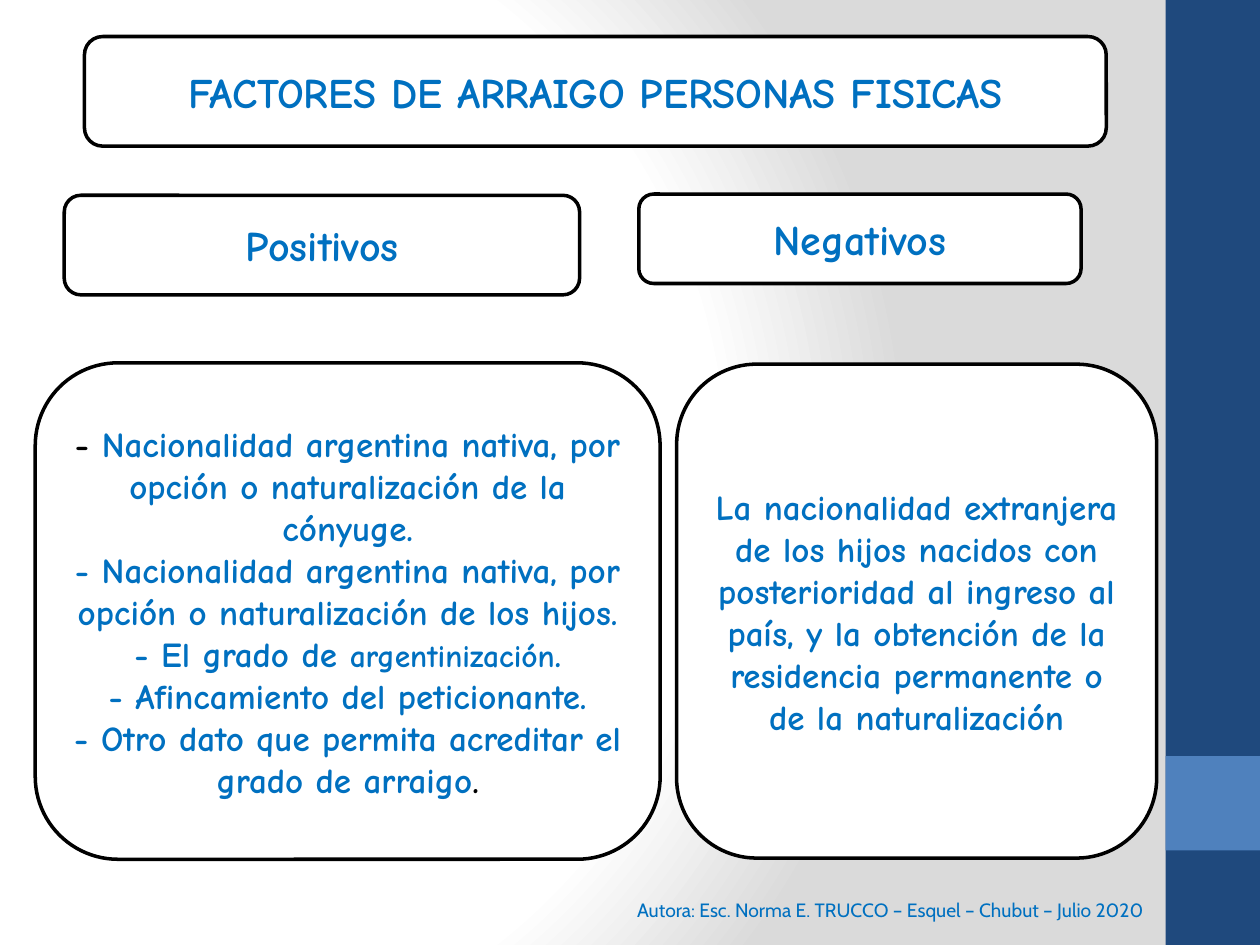
import pptx
import pptx.util
import pptx.dml.color
import pptx.enum.shapes
import pptx.enum.text
import pptx.oxml
import pptx.oxml.ns

Pt = pptx.util.Pt
ALIGN = pptx.enum.text.PP_ALIGN
MIDDLE = pptx.enum.text.MSO_ANCHOR.MIDDLE
SHAPE = pptx.enum.shapes.MSO_SHAPE
COLORS = {"text": "0070C0", "black": "000000", "white": "FFFFFF",
          "shade": "DADADA", "band": "1F497D", "accent": "4F81BD"}


def add_box(kind, place, fill, outline=None):
    box = slide.shapes.add_shape(kind, *[Pt(v) for v in place])
    box.shadow.inherit = False
    box.fill.solid()
    box.fill.fore_color.rgb = pptx.dml.color.RGBColor.from_string(COLORS[fill])
    if outline:
        box.line.color.rgb = pptx.dml.color.RGBColor.from_string(COLORS[outline])
        box.line.width = Pt(2)
    else:
        box.line.fill.background()
    return box


def write(holder, paragraphs, size, font="Comic Neue", bold=True, align=ALIGN.CENTER):
    frame = holder.text_frame
    frame.word_wrap = True
    frame.auto_size = pptx.enum.text.MSO_AUTO_SIZE.NONE
    frame.vertical_anchor = MIDDLE
    for i, pieces in enumerate(paragraphs):
        paragraph = frame.paragraphs[0] if i == 0 else frame.add_paragraph()
        paragraph.alignment = align
        paragraph.space_before = Pt(0)
        for text, color, run_size in pieces:
            run = paragraph.add_run()
            run.text = text
            run.font.name = font
            run.font.size = Pt(run_size or size)
            run.font.bold = bold
            run.font.color.rgb = pptx.dml.color.RGBColor.from_string(COLORS[color])


deck = pptx.Presentation()
deck.slide_width, deck.slide_height = Pt(720), Pt(540)
slide = deck.slides.add_slide(deck.slide_layouts[1])

stops = "".join(
    f'<a:gs pos="{position}"><a:srgbClr val="{COLORS[color]}"/></a:gs>'
    for position, color in ((0, "white"), (75000, "white"), (100000, "shade")))
background = pptx.oxml.parse_xml(
    f'<p:bg {pptx.oxml.ns.nsdecls("p", "a")}><p:bgPr><a:gradFill rotWithShape="1">'
    f'<a:gsLst>{stops}</a:gsLst><a:path path="circle">'
    '<a:fillToRect l="20000" t="50000" r="100000" b="50000"/></a:path></a:gradFill>'
    '<a:effectLst/></p:bgPr></p:bg>')
slide.element.cSld.insert(0, background)

add_box(SHAPE.RECTANGLE, (666, 0, 54, 540), "band")
add_box(SHAPE.RECTANGLE, (666, 432, 54, 54), "accent")

author = slide.shapes.add_textbox(Pt(246.24), Pt(505.44), Pt(414.72), Pt(28.8))
write(author, [[("Autora: Esc. Norma E. TRUCCO – Esquel – Chubut – Julio 2020", "text", None)]],
      11, "Cabin", False, ALIGN.RIGHT)

negative_factor = ("La nacionalidad extranjera de los hijos nacidos con posterioridad "
                   "al ingreso al país, y la obtención de la residencia permanente o "
                   "de la naturalización")
positive_factors = [
    [("- ", "black", None),
     ("Nacionalidad argentina nativa, por opción o naturalización de la cónyuge.", "text", None)],
    [("- Nacionalidad argentina nativa, por opción o naturalización de los hijos.", "text", None)],
    [("- El grado de ", "text", None), ("argentinización", "text", 18), (".", "text", None)],
    [("- Afincamiento del peticionante.", "text", None)],
    [("- Otro dato que permita acreditar el grado de arraigo", "text", None),
     (".", "black", None)],
]
title, factors = slide.placeholders
cards = [
    ((48.24, 20.88, 583.92, 62.64), [[("FACTORES DE ARRAIGO PERSONAS FISICAS", "text", None)]], 24, title),
    ((36.72, 111.6, 294.48, 56.88), [[("Positivos", "text", None)]], 24, None),
    ((365.04, 110.88, 252.72, 51.12), [[("Negativos", "text", None)]], 24, None),
    ((20.16, 207.36, 357.12, 283.68), positive_factors, 20, factors),
    ((386.64, 208.08, 274.32, 282.24), [[(negative_factor, "text", None)]], 20, None),
]
for place, paragraphs, size, placeholder in cards:
    card = add_box(SHAPE.ROUNDED_RECTANGLE, place, "white", "black")
    if placeholder is not None:
        left, top, width, height = place
        inset = 0.05 * min(width, height)
        placeholder.left, placeholder.top = Pt(left + inset), Pt(top + inset)
        placeholder.width, placeholder.height = Pt(width - 2 * inset), Pt(height - 2 * inset)
        slide.shapes._spTree.append(placeholder.element)
    write(placeholder or card, paragraphs, size)

for factor in factors.text_frame.paragraphs:
    properties = factor._p.get_or_add_pPr()
    properties.set("marL", "0")
    properties.set("indent", "0")
    properties.append(pptx.oxml.parse_xml(f'<a:buNone {pptx.oxml.ns.nsdecls("a")}/>'))

deck.save("out.pptx")
